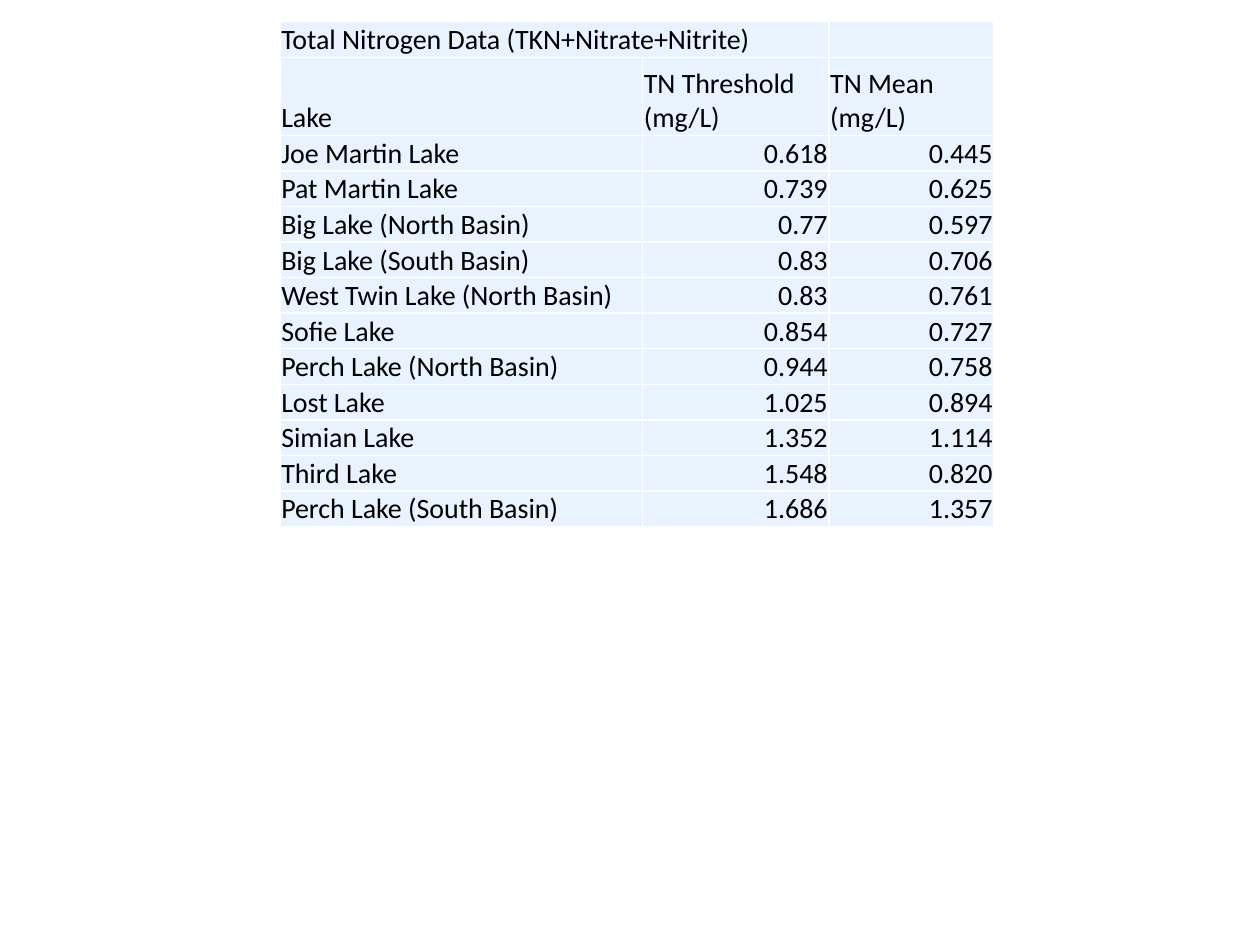
from lxml import etree
from pptx import Presentation
from pptx.dml.color import RGBColor
from pptx.enum import text as t
from pptx.oxml import ns
from pptx.util import Pt

BLACK = RGBColor(0, 0, 0)
WHITE = RGBColor(255, 255, 255)
PALE = RGBColor(0xE8, 0xF3, 0xFF)

TITLE = "Total Nitrogen Data (TKN+Nitrate+Nitrite)"
HEADS = ("Lake", "TN Threshold (mg/L)", "TN Mean (mg/L)")
LAKES = [
    ("Joe Martin Lake", "0.618", "0.445"),
    ("Pat Martin Lake", "0.739", "0.625"),
    ("Big Lake (North Basin)", "0.77", "0.597"),
    ("Big Lake (South Basin)", "0.83", "0.706"),
    ("West Twin Lake (North Basin)", "0.83", "0.761"),
    ("Sofie Lake", "0.854", "0.727"),
    ("Perch Lake (North Basin)", "0.944", "0.758"),
    ("Lost Lake", "1.025", "0.894"),
    ("Simian Lake", "1.352", "1.114"),
    ("Third Lake", "1.548", "0.820"),
    ("Perch Lake (South Basin)", "1.686", "1.357"),
]
SHARES = (2.88, 1.48, 1.31)
HEAD_H = 44.6


def write(frame, words, size=16, font="Calibri", color=BLACK, align=t.PP_ALIGN.LEFT):
    para = frame.paragraphs[0]
    para.alignment = align
    if words:
        run = para.add_run()
        run.text = words
        run.font.size = Pt(size)
        run.font.name = font
        run.font.color.rgb = color
    else:
        end = etree.SubElement(para._p, ns.qn("a:endParaRPr"))
        end.set("sz", str(size * 100))


def border(cell, color=WHITE, width=1):
    props = cell._tc.get_or_add_tcPr()
    for spot, side in enumerate(("lnL", "lnR", "lnT", "lnB")):
        line = etree.Element(ns.qn("a:" + side), w=str(Pt(width)))
        fill = etree.SubElement(line, ns.qn("a:solidFill"))
        etree.SubElement(fill, ns.qn("a:srgbClr"), val=str(color))
        props.insert(spot, line)


def style(cell):
    cell.fill.solid()
    cell.fill.fore_color.rgb = PALE
    cell.vertical_anchor = t.MSO_ANCHOR.BOTTOM
    cell.margin_left = cell.margin_right = cell.margin_top = Pt(0.75)
    cell.margin_bottom = 0
    border(cell)


def lake_table(slide, left, top, width, height):
    rows = [(TITLE, "", ""), HEADS, *LAKES]
    table = slide.shapes.add_table(
        len(rows), len(HEADS), Pt(left), Pt(top), Pt(width), Pt(height)
    ).table
    table.first_row = table.horz_banding = False
    for col, share in zip(table.columns, SHARES):
        col.width = Pt(width * share / sum(SHARES))
    row_h = (height - HEAD_H) / (len(rows) - 1)
    for r, row in enumerate(rows):
        table.rows[r].height = Pt(HEAD_H if r == 1 else row_h)
        for c, words in enumerate(row):
            cell = table.cell(r, c)
            style(cell)
            number = r > 1 and c > 0
            align = t.PP_ALIGN.RIGHT if number else t.PP_ALIGN.LEFT
            write(cell.text_frame, words, align=align)
    table.cell(0, 0).merge(table.cell(0, 1))


def main():
    deck = Presentation()
    deck.slide_width, deck.slide_height = Pt(720), Pt(540)
    slide = deck.slides.add_slide(deck.slide_layouts[6])
    lake_table(slide, 160, 12.4, 408, 284)
    deck.save("out.pptx")


if __name__ == "__main__":
    main()
